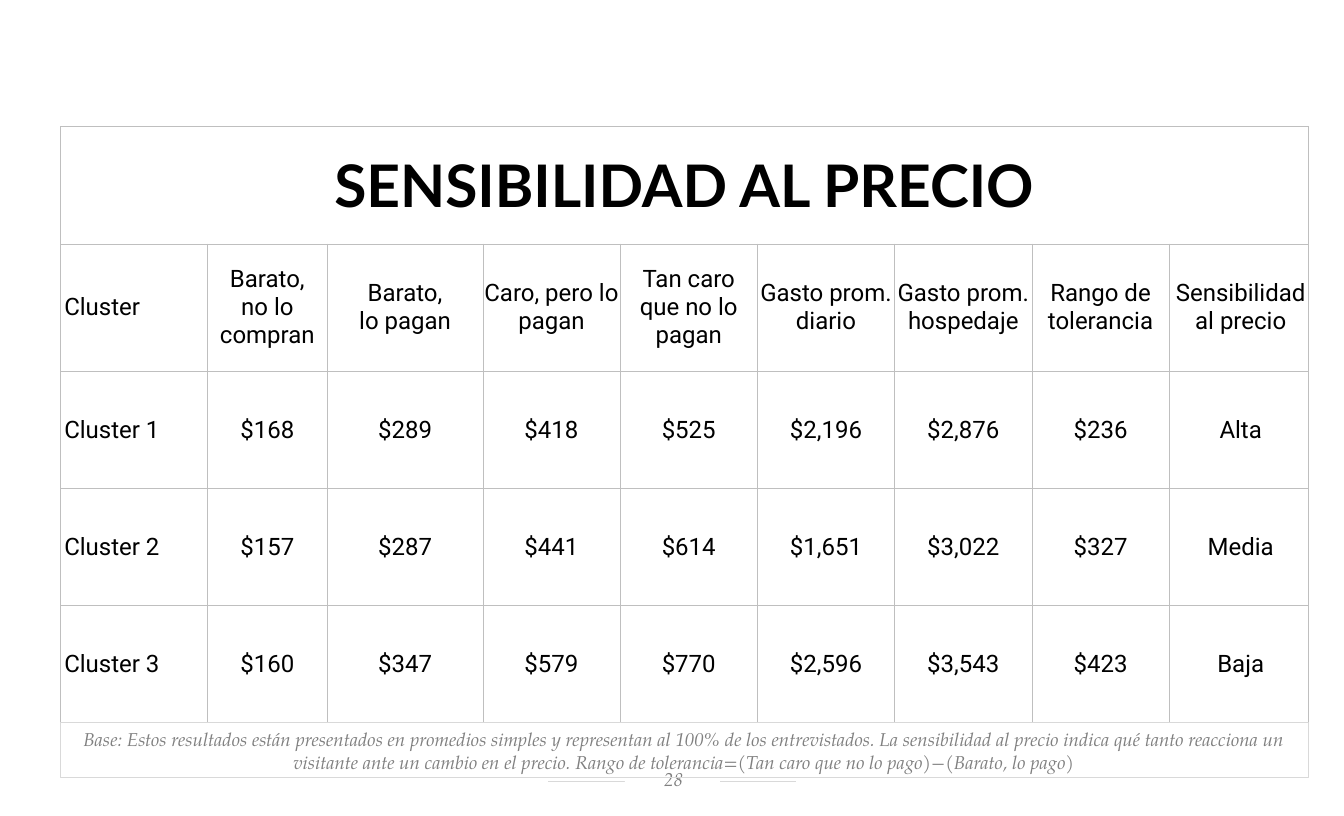
from dataclasses import dataclass

from lxml.etree import SubElement
from pptx import Presentation
from pptx.dml.color import RGBColor
from pptx.enum.shapes import MSO_CONNECTOR as Link, MSO_SHAPE as Form
from pptx.enum.text import MSO_ANCHOR as Anchor, PP_ALIGN as Align
from pptx.oxml.ns import qn
from pptx.slide import Slide
from pptx.table import _Cell as Cell
from pptx.text.text import TextFrame
from pptx.util import Inches, Pt

BLACK = RGBColor(0x00, 0x00, 0x00)
WHITE = RGBColor(0xFF, 0xFF, 0xFF)
GRAY = RGBColor(0x80, 0x80, 0x80)
PALE = RGBColor(0xD9, 0xD9, 0xD9)
GRID = RGBColor(0xBF, 0xBF, 0xBF)


@dataclass(frozen=True)
class Style:
    font: str
    size: int
    color: RGBColor
    bold: bool = False
    italic: bool = False


@dataclass(frozen=True)
class Box:
    left: float
    top: float
    width: float
    height: float
    text: str
    anchor: Anchor
    pads: tuple[float, float, float, float] = (0.1, 0.05, 0.1, 0.05)
    fill: RGBColor | None = None
    line: RGBColor | None = None


HEAD = Style("Lato", 44, BLACK, bold=True)
BODY = Style("Roboto", 18, BLACK)
NOTE = Style("TeX Gyre Pagella", 14, GRAY, italic=True)

TITLE = "SENSIBILIDAD AL PRECIO"
ROWS = [
    ["Cluster", "Barato,\nno lo compran", "Barato,\nlo pagan", "Caro, pero lo pagan",
     "Tan caro que no lo pagan", "Gasto prom. diario", "Gasto prom. hospedaje",
     "Rango de tolerancia", "Sensibilidad al precio"],
    ["Cluster 1", "$168", "$289", "$418", "$525", "$2,196", "$2,876", "$236", "Alta"],
    ["Cluster 2", "$157", "$287", "$441", "$614", "$1,651", "$3,022", "$327", "Media"],
    ["Cluster 3", "$160", "$347", "$579", "$770", "$2,596", "$3,543", "$423", "Baja"],
]
WIDTHS = [1.53, 1.25, 1.62] + [1.43] * 5 + [1.45]
HEIGHTS = [1.22, 1.33] + [1.22] * 3

PAGE = Box(6.51, 7.98, 0.99, 0.29, "28", Anchor.MIDDLE,
           pads=(0.12, 0.02, 0.1, 0.05), fill=WHITE)
BASE = Box(
    0.63, 7.53, 13, 0.57,
    "Base: Estos resultados están presentados en promedios simples y representan al "
    "100% de los entrevistados. La sensibilidad al precio indica qué tanto reacciona un "
    "visitante ante un cambio en el precio. "
    "Rango de tolerancia=(Tan caro que no lo pago)−(Barato, lo pago)",
    Anchor.BOTTOM, line=PALE)


def write(frame: TextFrame, text: str, style: Style, align: Align = Align.CENTER) -> None:
    frame.text = text
    for para in frame.paragraphs:
        para.alignment = align
        for run in para.runs:
            font = run.font
            font.name, font.size = style.font, Pt(style.size)
            font.bold, font.italic = style.bold, style.italic
            font.color.rgb = style.color


def draw_box(slide: Slide, box: Box) -> None:
    shape = slide.shapes.add_shape(
        Form.RECTANGLE, *map(Inches, (box.left, box.top, box.width, box.height)))
    shape.shadow.inherit = False
    for paint, color in ((shape.fill, box.fill), (shape.line.fill, box.line)):
        if color is None:
            paint.background()
        else:
            paint.solid()
            paint.fore_color.rgb = color
    if box.line is not None:
        shape.line.width = Pt(0.75)
    frame = shape.text_frame
    frame.word_wrap = True
    frame.vertical_anchor = box.anchor
    (frame.margin_left, frame.margin_top,
     frame.margin_right, frame.margin_bottom) = map(Inches, box.pads)
    write(frame, box.text, NOTE)


def draw_rule(slide: Slide) -> None:
    rule = slide.shapes.add_connector(
        Link.STRAIGHT, Inches(5.71), Inches(8.14), Inches(8.29), Inches(8.14))
    rule.line.color.rgb = PALE
    rule.line.width = Pt(0.5)
    SubElement(rule._element.spPr, qn("a:effectLst"))


def frame_cell(cell: Cell) -> None:
    props = cell._tc.get_or_add_tcPr()
    for side in "LRTB":
        edge = SubElement(props, qn(f"a:ln{side}"), w=str(Pt(0.5)))
        fill = SubElement(edge, qn("a:solidFill"))
        SubElement(fill, qn("a:srgbClr"), val=str(GRID))
    cell.fill.background()
    cell.vertical_anchor = Anchor.MIDDLE
    cell.margin_left = cell.margin_right = cell.margin_top = cell.margin_bottom = 0


def draw_table(slide: Slide) -> None:
    table = slide.shapes.add_table(
        len(HEIGHTS), len(WIDTHS), Inches(0.63), Inches(1.32), Inches(13), Inches(6.2)).table
    table.first_row = table.horz_banding = False
    for col, width in zip(table.columns, WIDTHS):
        col.width = Inches(width)
    for row, height in zip(table.rows, HEIGHTS):
        row.height = Inches(height)
    for cell in table.iter_cells():
        frame_cell(cell)
    last = len(WIDTHS) - 1
    table.cell(0, 0).merge(table.cell(0, last))
    write(table.cell(0, 0).text_frame, TITLE, HEAD)
    for r, row in enumerate(ROWS, 1):
        for c, text in enumerate(row):
            cell = table.cell(r, c)
            if c in (0, last):
                cell.margin_left = Inches(0.04)
            write(cell.text_frame, text, BODY, Align.CENTER if c else Align.LEFT)


def main() -> None:
    deck = Presentation()
    deck.slide_width, deck.slide_height = Inches(14), Inches(8.5)
    slide = deck.slides.add_slide(deck.slide_layouts[6])
    draw_rule(slide)
    draw_box(slide, PAGE)
    draw_table(slide)
    draw_box(slide, BASE)
    deck.save("out.pptx")


if __name__ == "__main__":
    main()
